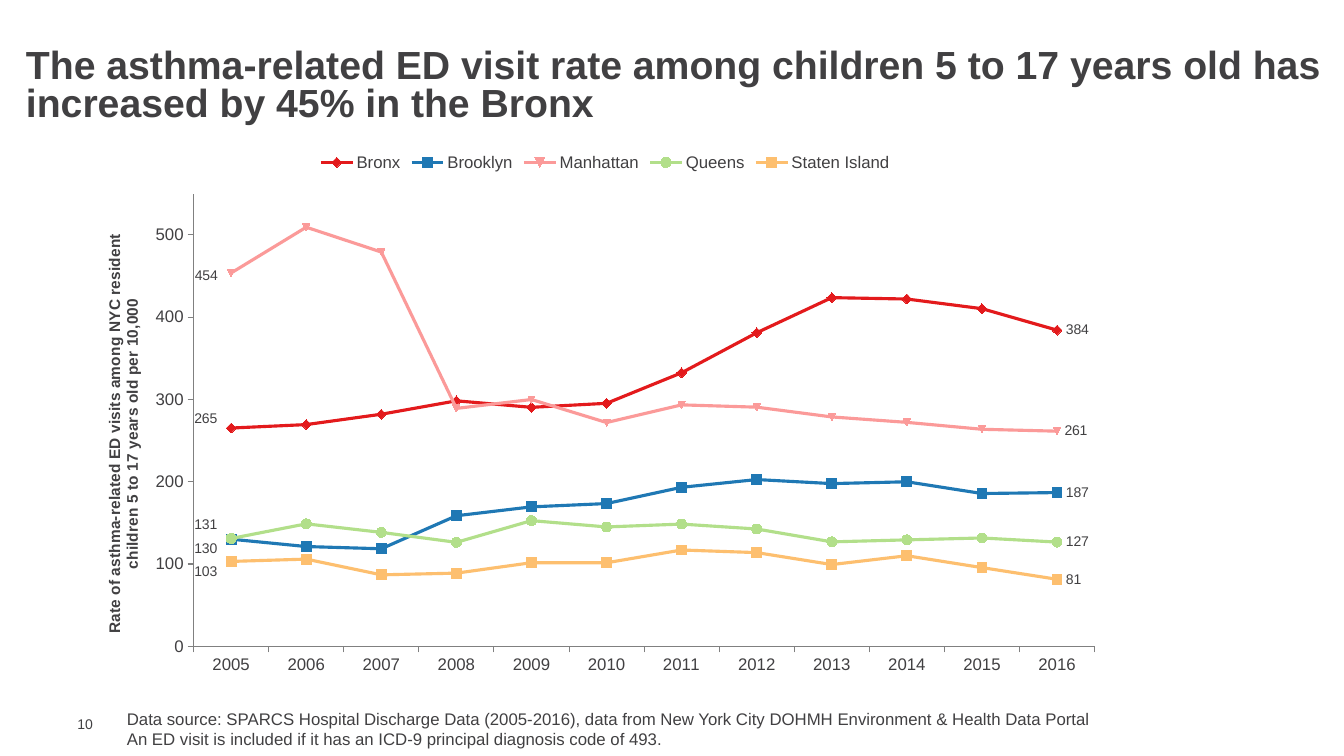
from dataclasses import dataclass
from lxml.etree import fromstring
from pptx import Presentation
from pptx.chart.data import CategoryChartData as ChartData
from pptx.dml.color import RGBColor as RGB
from pptx.enum.chart import XL_CHART_TYPE as Kind, XL_LABEL_POSITION as Side
from pptx.enum.chart import XL_LEGEND_POSITION as Place, XL_MARKER_STYLE as Mark
from pptx.enum.chart import XL_TICK_MARK as Tick
from pptx.enum.text import MSO_ANCHOR as Anchor
from pptx.oxml import parse_xml
from pptx.oxml.ns import nsdecls
from pptx.util import Pt


@dataclass(frozen=True)
class Theme:
    font: str = "Arial"
    ink: str = "414042"
    axis: str = "808080"
    bronx: str = "E31A1C"
    brook: str = "1F78B4"
    manh: str = "FB9A99"
    queens: str = "B2DF8A"
    staten: str = "FDBF6F"
    head: int = 28
    body: int = 12
    name: int = 11
    small: int = 10


theme = Theme()


def style(font, size, bold=False):
    font.name, font.size, font.bold = theme.font, Pt(size), bold
    font.color.rgb = RGB.from_string(theme.ink)


def write(text, box, size, bold=False, anchor=Anchor.TOP, space=1.0, inset=3.6):
    """Add a text box with one paragraph per line; inset is top and bottom."""
    frame = slide.shapes.add_textbox(*map(Pt, box)).text_frame
    frame.word_wrap = True
    frame.vertical_anchor = anchor
    frame.margin_top = frame.margin_bottom = Pt(inset)
    frame.text = text
    for para in frame.paragraphs:
        para.line_spacing = space
        style(para.font, size, bold)


deck = Presentation()
deck.slide_width, deck.slide_height = Pt(960), Pt(540)
slide = deck.slides.add_slide(deck.slide_layouts[6])

write("The asthma-related ED visit rate among children 5 to 17 years old has "
      "increased by 45% in the Bronx",
      (11.5, 31.7, 942, 61.2), theme.head, bold=True, anchor=Anchor.MIDDLE, space=0.8)
write("10", (48.2, 511.2, 31, 12.2), theme.small, anchor=Anchor.MIDDLE, inset=0)
write("Data source: SPARCS Hospital Discharge Data (2005-2016), data from "
      "New York City DOHMH Environment & Health Data Portal\n"
      "An ED visit is included if it has an ICD-9 principal diagnosis code of 493.",
      (83.5, 502.6, 714.2, 36), theme.body)

# Name, colour, marker, marker size, shift of the first label (share of chart), rates
rows = [
    ("Bronx", theme.bronx, Mark.DIAMOND, 7, (-0.005, -0.017),
     (265.2, 269.4, 282, 298.3, 290.4, 295.3, 332.4, 381, 423.7, 422, 410.3, 384.2)),
    ("Brooklyn", theme.brook, Mark.SQUARE, 7, (-0.005, 0.017),
     (130.1, 121.2, 118.5, 158.6, 169.4, 173.4, 193.2, 202.6, 197.7, 199.9, 185.6, 186.8)),
    ("Manhattan", theme.manh, None, 5, (-0.006, 0.005),
     (453.7, 509.3, 479.1, 289.1, 299.9, 271.9, 293.4, 290.6, 278.7, 272.1, 263.7, 261.4)),
    ("Queens", theme.queens, Mark.CIRCLE, 7, (-0.005, -0.026),
     (131, 148.8, 138.4, 126.3, 152.7, 145, 148.5, 142.5, 126.9, 129.3, 131.6, 126.6)),
    ("Staten Island", theme.staten, Mark.SQUARE, 7, (-0.005, 0.019),
     (103.1, 105.9, 86.8, 88.9, 101.6, 101.5, 117, 113.8, 99.3, 110, 95.6, 81.4)),
]
data = ChartData(number_format="0")
data.categories = [str(year) for year in range(2005, 2017)]
for name, *_, rates in rows:
    data.add_series(name, rates)

chart = slide.shapes.add_chart(
    Kind.LINE_MARKERS, Pt(72), Pt(101.5), Pt(720.7), Pt(392.4), data).chart
style(chart.font, theme.small)
chart.has_title = False
chart.has_legend = True
chart.legend.position = Place.TOP
chart.legend.include_in_layout = False
style(chart.legend.font, theme.body)

years, scale = chart.category_axis, chart.value_axis
for axis in (years, scale):
    axis.has_major_gridlines = False
    axis.major_tick_mark, axis.minor_tick_mark = Tick.OUTSIDE, Tick.NONE
    axis.format.line.color.rgb = RGB.from_string(theme.axis)
    axis.format.line.width = Pt(0.75)
    style(axis.tick_labels.font, theme.body)
scale.minimum_scale, scale.maximum_scale, scale.major_unit = 0, 550, 100
scale.tick_labels.number_format = "0"
scale.tick_labels.number_format_is_linked = False
title = scale.axis_title.text_frame
title.text = ("Rate of asthma-related ED visits among NYC resident "
              "children 5 to 17 years old per 10,000")
style(title.paragraphs[0].runs[0].font, theme.name, bold=True)


def layout(inner="", **parts):
    """Build a manual chart layout from its named parts."""
    body = "".join(f'<c:{key} val="{val}"/>' for key, val in parts.items())
    return parse_xml(f'<c:layout {nsdecls("c")}><c:manualLayout>{inner}{body}'
                     '</c:manualLayout></c:layout>')


area = chart._chartSpace.chart.plotArea
for old in area.xpath("c:layout"):
    area.remove(old)
area.insert(0, layout('<c:layoutTarget val="inner"/>', xMode="edge", yMode="edge",
                      x=0.092, y=0.094, w=0.893, h=0.824))

leader = ('<c:extLst xmlns:c="http://schemas.openxmlformats.org/drawingml/2006/chart">'
          '<c:ext uri="{CE6537A1-D6FC-4f65-9D91-7224C49458BB}" '
          'xmlns:c15="http://schemas.microsoft.com/office/drawing/2012/chart">'
          '<c15:showLeaderLines val="1"/></c:ext></c:extLst>')
for line, (_, hue, mark, size, (dx, dy), rates) in zip(chart.plots[0].series, rows):
    color = RGB.from_string(hue)
    line.smooth = False
    line.format.line.color.rgb = color
    line.format.line.width = Pt(2.25)
    line.marker.size = size
    if mark:
        line.marker.style = mark
    line.marker.format.fill.solid()
    line.marker.format.fill.fore_color.rgb = color
    line.marker.format.line.color.rgb = color

    labels = line.data_labels
    labels.show_value = False
    labels.number_format, labels.number_format_is_linked = "0", False
    style(labels.font, theme.small)
    for index, side in ((0, Side.LEFT), (len(rates) - 1, Side.RIGHT)):
        label = line.points[index].data_label
        style(label.font, theme.small)
        label.position = side
    first, last = line._element.xpath("c:dLbls/c:dLbl")
    for item in (first, last):
        item.insert(1, parse_xml(
            f'<c:numFmt {nsdecls("c")} formatCode="0" sourceLinked="0"/>'))
    first.insert(1, layout(x=dx, y=dy))
    line._element.xpath("c:dLbls")[0].append(fromstring(leader))

deck.save("out.pptx")
